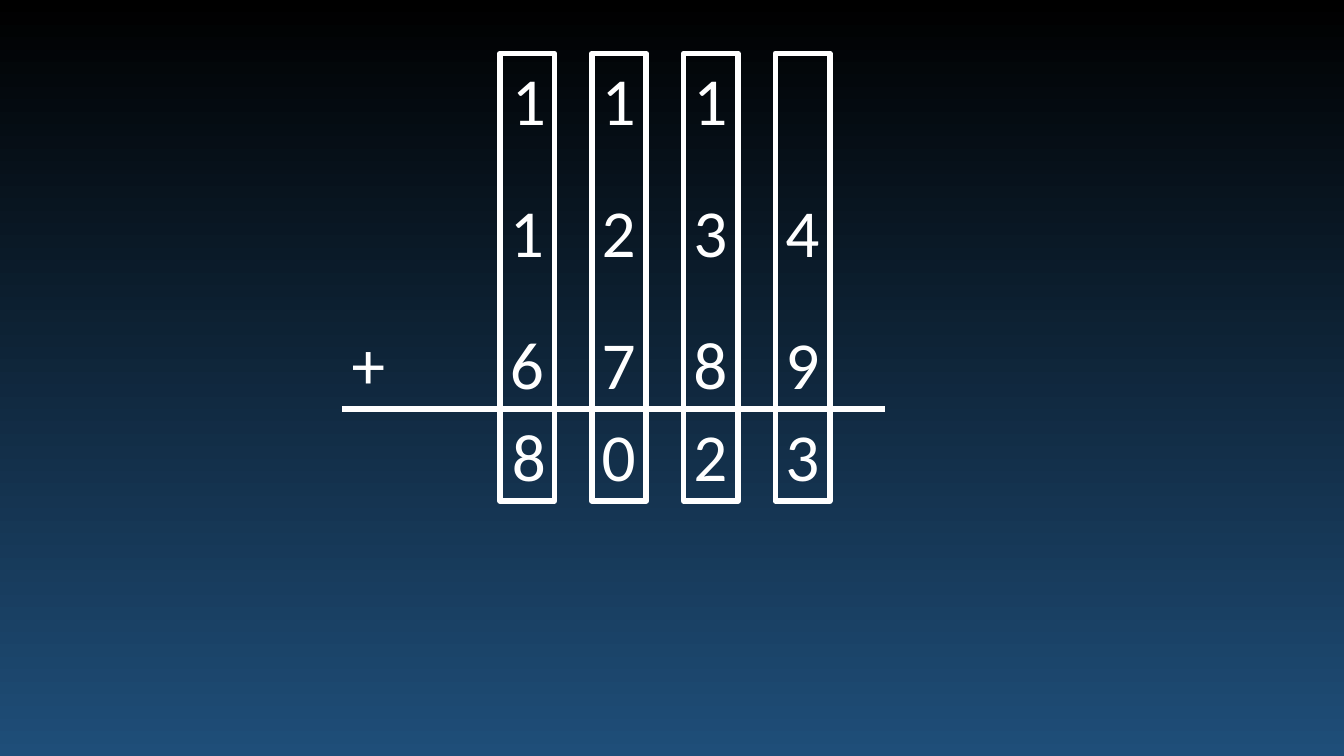
import dataclasses

import pptx
import pptx.dml.color
import pptx.enum.shapes
import pptx.enum.text
import pptx.oxml
import pptx.oxml.ns
import pptx.util

Inches = pptx.util.Inches


@dataclasses.dataclass(frozen=True)
class Theme:
    ink: str = "FFFFFF"
    sky: str = "000000"
    ground: str = "1F4E79"
    font: str = "Calibri"
    digit_size: int = 48
    line_width: int = 4


class Board:
    def __init__(self, deck, theme):
        self.theme = theme
        self.page = deck.slides.add_slide(deck.slide_layouts[6])

    def color(self, code):
        return pptx.dml.color.RGBColor.from_string(code)

    def background(self):
        fill = self.page.background.fill
        fill.gradient()
        fill.gradient_angle = 270
        for stop, code in zip(fill.gradient_stops, (self.theme.sky, self.theme.ground)):
            stop.color.rgb = self.color(code)

    def stroke(self, line):
        line.color.rgb = self.color(self.theme.ink)
        line.width = pptx.util.Pt(self.theme.line_width)

    def symbol(self, text, left, top, width, height):
        box = self.page.shapes.add_textbox(
            Inches(left), Inches(top), Inches(width), Inches(height))
        frame = box.text_frame
        frame.word_wrap = False
        frame.auto_size = pptx.enum.text.MSO_AUTO_SIZE.SHAPE_TO_FIT_TEXT
        span = frame.paragraphs[0].add_run()
        span.text = text
        span.font.name = self.theme.font
        span.font.size = pptx.util.Pt(self.theme.digit_size)
        span.font.color.rgb = self.color(self.theme.ink)

    def outline(self, left, top, width, height):
        box = self.page.shapes.add_shape(
            pptx.enum.shapes.MSO_SHAPE.RECTANGLE,
            Inches(left), Inches(top), Inches(width), Inches(height))
        box.shadow.inherit = False
        box.fill.background()
        self.stroke(box.line)

    def rule(self, left, right, top):
        line = self.page.shapes.add_connector(
            pptx.enum.shapes.MSO_CONNECTOR.STRAIGHT,
            Inches(left), Inches(top), Inches(right), Inches(top))
        self.stroke(line.line)
        properties = line._element.spPr
        properties.append(pptx.oxml.parse_xml(
            f"<a:effectLst {pptx.oxml.ns.nsdecls('a')}/>"))


def main():
    deck = pptx.Presentation()
    deck.slide_width = Inches(13.33)
    deck.slide_height = Inches(7.5)
    board = Board(deck, Theme())
    board.background()

    first_column, column_step = 4.96, 0.91
    digit_width, digit_height = 0.54, 0.91
    carry_top, addend_top, sum_top = 0.53, 3.15, 4.06
    sum_left, sum_right = 3.39, 8.78
    lead_nudge = 0.02
    rows = (
        ("111", carry_top, lead_nudge),
        ("1234", 1.84, 0),
        ("6789", addend_top, 0),
        ("8023", sum_top, lead_nudge),
    )

    columns = [first_column + column_step * index for index in range(4)]
    for digits, top, nudge in rows:
        for index, (digit, left) in enumerate(zip(digits, columns)):
            offset = nudge if index == 0 else 0
            board.symbol(digit, left + offset, top, digit_width, digit_height)
    board.symbol("+", sum_left, addend_top, digit_width, digit_height)
    board.rule(sum_left, sum_right, sum_top)
    for left in columns:
        board.outline(left, carry_top, digit_width, sum_top + digit_height - carry_top)

    deck.save("out.pptx")


if __name__ == "__main__":
    main()
